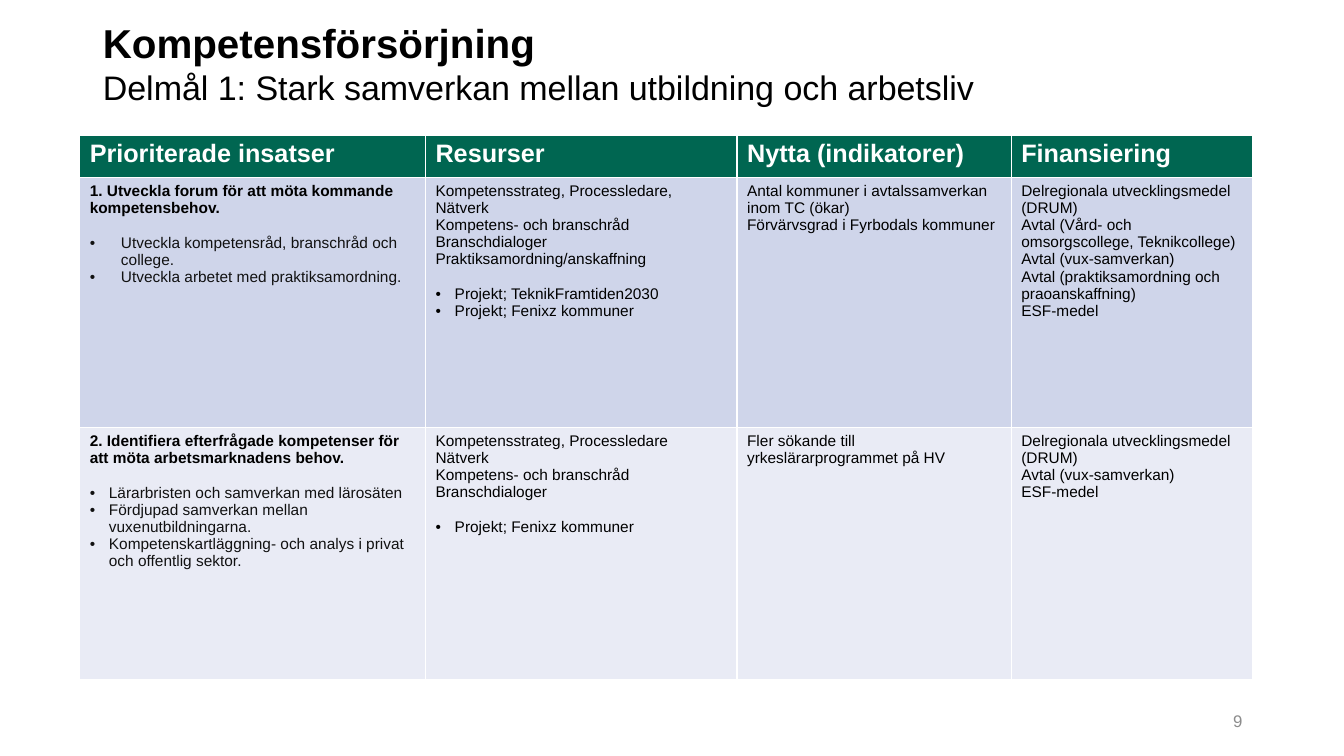
"""Build the Kompetensförsörjning slide: a title, a plan table and a page number."""
from dataclasses import dataclass

from lxml.etree import SubElement
from pptx import Presentation
from pptx.dml.color import RGBColor as Rgb
from pptx.enum.text import MSO_ANCHOR as Anchor, MSO_AUTO_SIZE as AutoSize, PP_ALIGN as Align
from pptx.oxml.ns import qn
from pptx.util import Pt

PX = 9144


@dataclass(frozen=True)
class Theme:
    face: str = "Arial"
    black: str = "000000"
    white: str = "FFFFFF"
    soft: str = "111111"
    grey: str = "8C8C8C"
    green: str = "006651"
    bands: tuple = ("CFD5EA", "E9EBF5")
    title: float = 28.8
    subtitle: float = 24.3
    header: float = 18
    body: float = 11
    page: float = 12
    gap: float = 12.5


theme = Theme()


def write(paragraph, words, size, colour, bold=False):
    """Add one formatted run."""
    run = paragraph.add_run()
    run.text = words
    run.font.name, run.font.size, run.font.bold = theme.face, Pt(size), bold
    run.font.color.rgb = Rgb.from_string(colour)


def fill_cell(cell, lines, bullets=(), indent=19, bold=False, bullet_colour=theme.black):
    """Write plain lines followed by a bulleted list."""
    for i, words in enumerate([*lines, *bullets]):
        paragraph = cell.text_frame.paragraphs[0] if i == 0 else cell.text_frame.add_paragraph()
        bulleted = i >= len(lines)
        if bulleted:
            props = paragraph._p.get_or_add_pPr()
            props.set("marL", str(indent * PX))
            props.set("indent", str(-indent * PX))
            SubElement(props, qn("a:buFont"), typeface=theme.face)
            SubElement(props, qn("a:buChar"), char="•")
        if i == len(lines):
            paragraph.space_before = Pt(theme.gap)
        write(paragraph, words, theme.body, bullet_colour if bulleted else theme.black,
              bold and not bulleted)


headers = ["Prioriterade insatser", "Resurser", "Nytta (indikatorer)", "Finansiering"]
plan = [
    dict(
        action="1. Utveckla forum för att möta kommande kompetensbehov.",
        steps=["Utveckla kompetensråd, branschråd och college.",
               "Utveckla arbetet med praktiksamordning."],
        step_indent=31,
        resources=["Kompetensstrateg, Processledare,", "Nätverk", "Kompetens- och branschråd",
                   "Branschdialoger", "Praktiksamordning/anskaffning"],
        projects=["Projekt; TeknikFramtiden2030", "Projekt; Fenixz kommuner"],
        benefits=["Antal kommuner i avtalssamverkan inom TC (ökar)",
                  "Förvärvsgrad i Fyrbodals kommuner"],
        funding=["Delregionala utvecklingsmedel (DRUM)",
                 "Avtal (Vård- och omsorgscollege, Teknikcollege)",
                 "Avtal (vux-samverkan)",
                 "Avtal (praktiksamordning och praoanskaffning)",
                 "ESF-medel"],
    ),
    dict(
        action="2. Identifiera efterfrågade kompetenser för att möta arbetsmarknadens behov.",
        steps=["Lärarbristen och samverkan med lärosäten",
               "Fördjupad samverkan mellan vuxenutbildningarna.",
               "Kompetenskartläggning- och analys i privat och offentlig sektor."],
        step_indent=19,
        resources=["Kompetensstrateg, Processledare", "Nätverk", "Kompetens- och branschråd",
                   "Branschdialoger"],
        projects=["Projekt; Fenixz kommuner"],
        benefits=["Fler sökande till yrkeslärarprogrammet på HV"],
        funding=["Delregionala utvecklingsmedel (DRUM)", "Avtal (vux-samverkan)", "ESF-medel"],
    ),
]

deck = Presentation()
deck.slide_width, deck.slide_height = 1333 * PX, 750 * PX
slide = deck.slides.add_slide(deck.slide_layouts[5])

title = slide.shapes.title
title.left, title.top, title.width, title.height = 92 * PX, 37 * PX, 1150 * PX, 51 * PX
title.text_frame.auto_size = AutoSize.NONE
title.text_frame.vertical_anchor = Anchor.MIDDLE
heading = title.text_frame.paragraphs[0]
heading.alignment = Align.LEFT
write(heading, "Kompetensförsörjning", theme.title, theme.black, True)
heading.add_line_break()
write(heading, "Delmål 1: Stark samverkan mellan utbildning och arbetsliv",
      theme.subtitle, theme.black)

widths, heights = [343, 309, 272, 239], [42, 248, 250]
table = slide.shapes.add_table(len(heights), len(widths), 79 * PX, 134 * PX,
                               sum(widths) * PX, sum(heights) * PX).table
for column, width in zip(table.columns, widths):
    column.width = width * PX
for row, height, band in zip(table.rows, heights, (theme.green, *theme.bands)):
    row.height = height * PX
    for cell in row.cells:
        cell.fill.solid()
        cell.fill.fore_color.rgb = Rgb.from_string(band)

for cell, words in zip(table.rows[0].cells, headers):
    write(cell.text_frame.paragraphs[0], words, theme.header, theme.white, True)
for r, goal in enumerate(plan, start=1):
    fill_cell(table.cell(r, 0), [goal["action"]], goal["steps"], goal["step_indent"],
              True, theme.soft)
    fill_cell(table.cell(r, 1), goal["resources"], goal["projects"])
    fill_cell(table.cell(r, 2), goal["benefits"])
    fill_cell(table.cell(r, 3), goal["funding"])

page = slide.shapes.add_textbox(942 * PX, 695 * PX, 300 * PX, 40 * PX).text_frame
page.word_wrap = True
page.vertical_anchor = Anchor.MIDDLE
page.paragraphs[0].alignment = Align.RIGHT
write(page.paragraphs[0], "9", theme.page, theme.grey)

deck.save("out.pptx")
